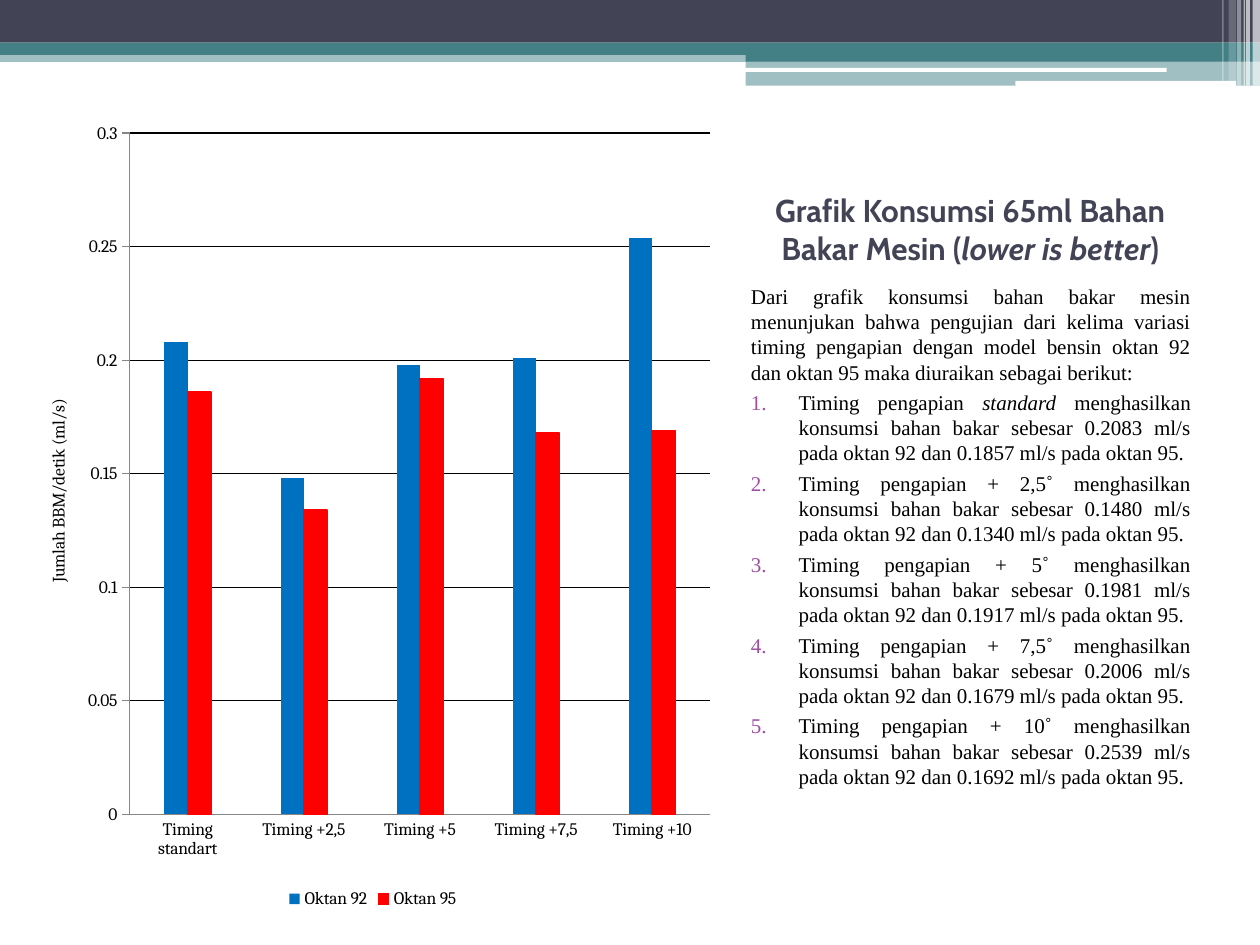
from lxml import etree
from pptx import Presentation
from pptx.chart.data import CategoryChartData
from pptx.dml.color import RGBColor
from pptx.enum.chart import XL_CHART_TYPE, XL_LEGEND_POSITION, XL_TICK_MARK
from pptx.enum.shapes import MSO_SHAPE
from pptx.enum.text import MSO_ANCHOR, PP_ALIGN
from pptx.oxml.ns import qn
from pptx.util import Cm, Pt

RECT = MSO_SHAPE.RECTANGLE
ROUND = MSO_SHAPE.ROUNDED_RECTANGLE
COLUMN = XL_CHART_TYPE.COLUMN_CLUSTERED
BOTTOM = XL_LEGEND_POSITION.BOTTOM
OUT, NONE = XL_TICK_MARK.OUTSIDE, XL_TICK_MARK.NONE
LOW = MSO_ANCHOR.BOTTOM
CENTER, JUSTIFY = PP_ALIGN.CENTER, PP_ALIGN.JUSTIFY

HEX = {
    "navy": "424456", "teal": "438086", "white": "FFFFFF", "black": "000000",
    "blue": "0070C0", "red": "FF0000", "plum": "A04DA3", "gray": "878787",
}
RGB = {name: RGBColor.from_string(code) for name, code in HEX.items()}

deck = Presentation()
deck.slide_width, deck.slide_height = Cm(25.4), Cm(19.05)
slide = deck.slides.add_slide(deck.slide_layouts[6])

bands = [
    (RECT, 0, 1.02, 25.4, 0.23, "teal", 50),
    (RECT, 0, 0, 25.4, 0.86, "navy", 100),
    (RECT, 0, 0.86, 25.4, 0.25, "teal", 100),
    (RECT, 15.03, 0.99, 10.37, 0.25, "teal", 100),
    (RECT, 15.03, 1.23, 10.37, 0.5, "teal", 50),
    (ROUND, 15.01, 1.37, 8.51, 0.08, "white", 100),
    (ROUND, 20.47, 1.63, 4.45, 0.1, "white", 100),
]
stripes = [
    (25.25, 0.15, 1.73, 65), (25.12, 0.08, 1.73, 65), (25.07, 0.03, 1.73, 60),
    (24.94, 0.08, 1.73, 40), (24.77, 0.15, 1.63, 20), (24.64, 0.03, 1.63, 30),
]
bands += [(RECT, x, 0, w, h, "white", a) for x, w, h, a in stripes]

for kind, x, y, w, h, tone, alpha in bands:
    band = slide.shapes.add_shape(kind, Cm(x), Cm(y), Cm(w), Cm(h))
    band.shadow.inherit = False
    band.line.fill.background()
    band.fill.solid()
    band.fill.fore_color.rgb = RGB[tone]
    if alpha < 100:
        color = band.fill._xPr.find(qn("a:solidFill"))[0]
        etree.SubElement(color, qn("a:alpha"), val=str(alpha * 1000))


def style(font, name, size, tone):
    font.name, font.size = name, Pt(size)
    font.color.rgb = RGB[tone]


def write(para, parts, name, size, tone):
    for spot, part in enumerate(parts):
        run = para.add_run()
        run.text = part
        style(run.font, name, size, tone)
        run.font.italic = spot == 1


title = slide.shapes.add_textbox(Cm(14.86), Cm(3.07), Cm(9.4), Cm(2.44))
frame = title.text_frame
frame.word_wrap = True
frame.vertical_anchor = LOW
head = frame.paragraphs[0]
head.alignment = CENTER
head.font.bold = True
parts = ["Grafik Konsumsi 65ml Bahan Bakar Mesin (", "lower is better", ")"]
write(head, parts, "Cabin", 18, "navy")
for run in head.runs:
    run.font.bold = True

intro = (
    "Dari grafik konsumsi bahan bakar mesin menunjukan bahwa pengujian dari "
    "kelima variasi timing pengapian dengan model bensin oktan 92 dan oktan 95 "
    "maka diuraikan sebagai berikut:"
)
tests = [
    ("standard", "0.2083", "0.1857"),
    ("+ 2,5˚", "0.1480", "0.1340"),
    ("+ 5˚", "0.1981", "0.1917"),
    ("+ 7,5˚", "0.2006", "0.1679"),
    ("+ 10˚", "0.2539", "0.1692"),
]
rows = [[intro]]
for mode, low, high in tests:
    lead = "Timing pengapian "
    tail = (f" menghasilkan konsumsi bahan bakar sebesar {low} ml/s "
            f"pada oktan 92 dan {high} ml/s pada oktan 95.")
    rows.append([lead, mode, tail] if mode == "standard" else [lead + mode + tail])

body = slide.shapes.add_textbox(Cm(14.86), Cm(5.59), Cm(9.4), Cm(12.83))
frame = body.text_frame
frame.word_wrap = True
for spot, parts in enumerate(rows):
    para = frame.add_paragraph() if spot else frame.paragraphs[0]
    para.alignment = JUSTIFY
    para.space_before = Pt(3)
    write(para, parts, "Times New Roman", 12, "black")
    props = para._p.get_or_add_pPr()
    props.set("marL", str(Cm(0.99 if spot else 0.03)))
    props.set("indent", str(Cm(-0.96 if spot else 0)))
    if spot:
        tint = etree.SubElement(props, qn("a:buClr"))
        etree.SubElement(tint, qn("a:srgbClr"), val=HEX["plum"])
        etree.SubElement(props, qn("a:buFont"), typeface="Times New Roman")
        etree.SubElement(props, qn("a:buAutoNum"), type="arabicPeriod")

data = CategoryChartData()
data.categories = ["Timing standart", "Timing +2,5", "Timing +5", "Timing +7,5", "Timing +10"]
data.add_series("Oktan 92", [0.208, 0.148, 0.198, 0.201, 0.254])
data.add_series("Oktan 95", [0.186, 0.134, 0.192, 0.168, 0.169])
chart = slide.shapes.add_chart(
    COLUMN, Cm(0.43), Cm(2.16), Cm(14.17), Cm(16.26), data).chart
style(chart.font, "Cambria", 10, "black")
chart.has_title = False
chart.has_legend = True
chart.legend.position = BOTTOM
chart.legend.include_in_layout = False

plot = chart.plots[0]
plot.gap_width, plot.overlap = 300, 0
plot.vary_by_categories = False
for bar, tone in zip(plot.series, ["blue", "red"]):
    bar.format.fill.solid()
    bar.format.fill.fore_color.rgb = RGB[tone]
bar.format.line.color.rgb = RGB["red"]
bar.format.line.width = Pt(0.75)

for axis, tick in [(chart.category_axis, NONE), (chart.value_axis, OUT)]:
    axis.major_tick_mark, axis.minor_tick_mark = tick, NONE
    axis.format.line.color.rgb = RGB["gray"]
    axis.format.line.width = Pt(0.75)
axis.minimum_scale, axis.maximum_scale, axis.major_unit = 0, 0.3, 0.05
axis.major_gridlines.format.line.color.rgb = RGB["black"]
axis.major_gridlines.format.line.width = Pt(0.75)
label = axis.axis_title.text_frame
label.text = "Jumlah BBM/detik (ml/s)"
font = label.paragraphs[0].runs[0].font
style(font, "Cambria", 10, "black")
font.bold = False

deck.save("out.pptx")
